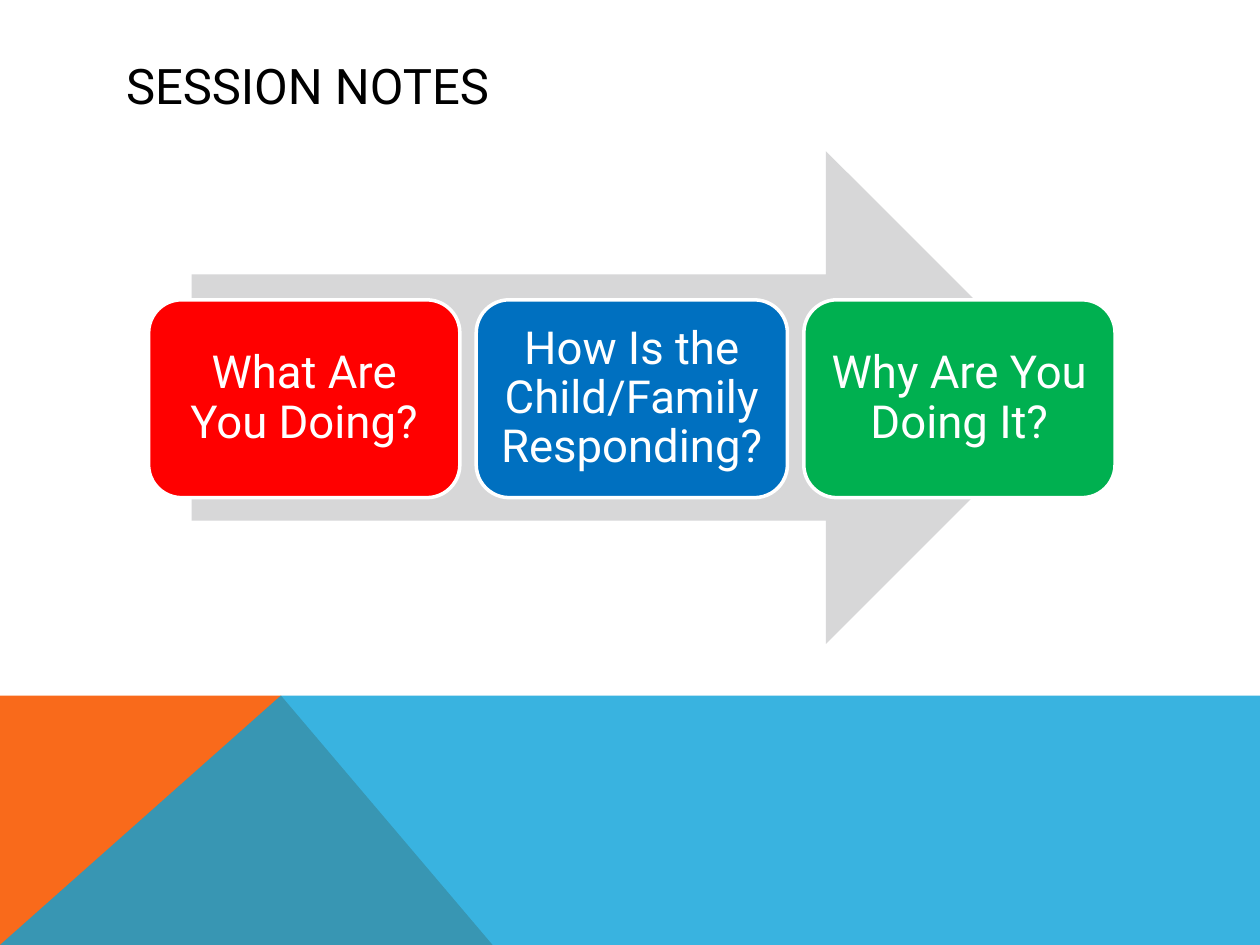
import pptx
import pptx.util
import pptx.dml.color
import pptx.enum.shapes
import pptx.enum.text
from lxml import etree
from pptx.util import Inches

COLORS = {
    "orange": "F96A1B", "sky": "08A1D9", "arrow": "D7D7D8",
    "red": "FF0000", "blue": "0070C0", "green": "00B050",
    "white": "FFFFFF", "black": "000000",
}
FONT = "Roboto"


def rgb(name):
    return pptx.dml.color.RGBColor.from_string(COLORS[name])


def style_text(frame, size, color, alignment):
    frame.word_wrap = True
    frame.vertical_anchor = pptx.enum.text.MSO_ANCHOR.MIDDLE
    paragraph = frame.paragraphs[0]
    paragraph.alignment = alignment
    paragraph.line_spacing = 0.9
    font = paragraph.runs[0].font
    font.name = FONT
    font.size = pptx.util.Pt(size)
    font.color.rgb = rgb(color)


deck = pptx.Presentation()
deck.slide_width = Inches(10)
deck.slide_height = Inches(7.5)
slide = deck.slides.add_slide(deck.slide_layouts[5])
shapes = slide.shapes

# Footer bands: an orange triangle under a translucent blue panel
bands = [
    ("orange", 100, [(0, 7.5), (0, 5.52), (2.23, 5.52), (3.91, 7.5)]),
    ("sky", 80, [(0, 7.5), (2.23, 5.52), (10, 5.52), (10, 7.5)]),
]
for color, opacity, points in bands:
    corners = [(Inches(x), Inches(y)) for x, y in points]
    outline = shapes.build_freeform(*corners[0])
    outline.add_line_segments(corners[1:], close=True)
    band = outline.convert_to_shape()
    band.shadow.inherit = False
    band.fill.solid()
    band.fill.fore_color.rgb = rgb(color)
    band.line.fill.background()
    if opacity < 100:
        fill_color = band.fill._xPr.find(".//" + pptx.oxml.ns.qn("a:srgbClr"))
        alpha = etree.SubElement(fill_color, pptx.oxml.ns.qn("a:alpha"))
        alpha.set("val", str(opacity * 1000))

title = shapes.title
title.left, title.top = Inches(0.9), Inches(0.4)
title.width, title.height = Inches(8.22), Inches(0.6)
title.text_frame.text = "SESSION NOTES"
style_text(title.text_frame, 28, "black", pptx.enum.text.PP_ALIGN.LEFT)

arrow = shapes.add_shape(pptx.enum.shapes.MSO_SHAPE.RIGHT_ARROW,
                         Inches(1.52), Inches(1.2), Inches(6.99), Inches(3.91))
arrow.shadow.inherit = False
arrow.fill.solid()
arrow.fill.fore_color.rgb = rgb("arrow")
arrow.line.fill.background()

questions = [
    ("What Are You Doing?", "red"),
    ("How Is the Child/Family Responding?", "blue"),
    ("Why Are You Doing It?", "green"),
]
for index, (question, color) in enumerate(questions):
    card = shapes.add_shape(pptx.enum.shapes.MSO_SHAPE.ROUNDED_RECTANGLE,
                            Inches(1.18 + 2.6 * index), Inches(2.38),
                            Inches(2.47), Inches(1.57))
    card.shadow.inherit = False
    card.fill.solid()
    card.fill.fore_color.rgb = rgb(color)
    card.line.color.rgb = rgb("white")
    card.line.width = pptx.util.Pt(2)
    frame = card.text_frame
    frame.margin_left = frame.margin_right = Inches(0.1)
    frame.margin_top = frame.margin_bottom = Inches(0.1)
    frame.text = question
    style_text(frame, 26, "white", pptx.enum.text.PP_ALIGN.CENTER)

deck.save("out.pptx")
